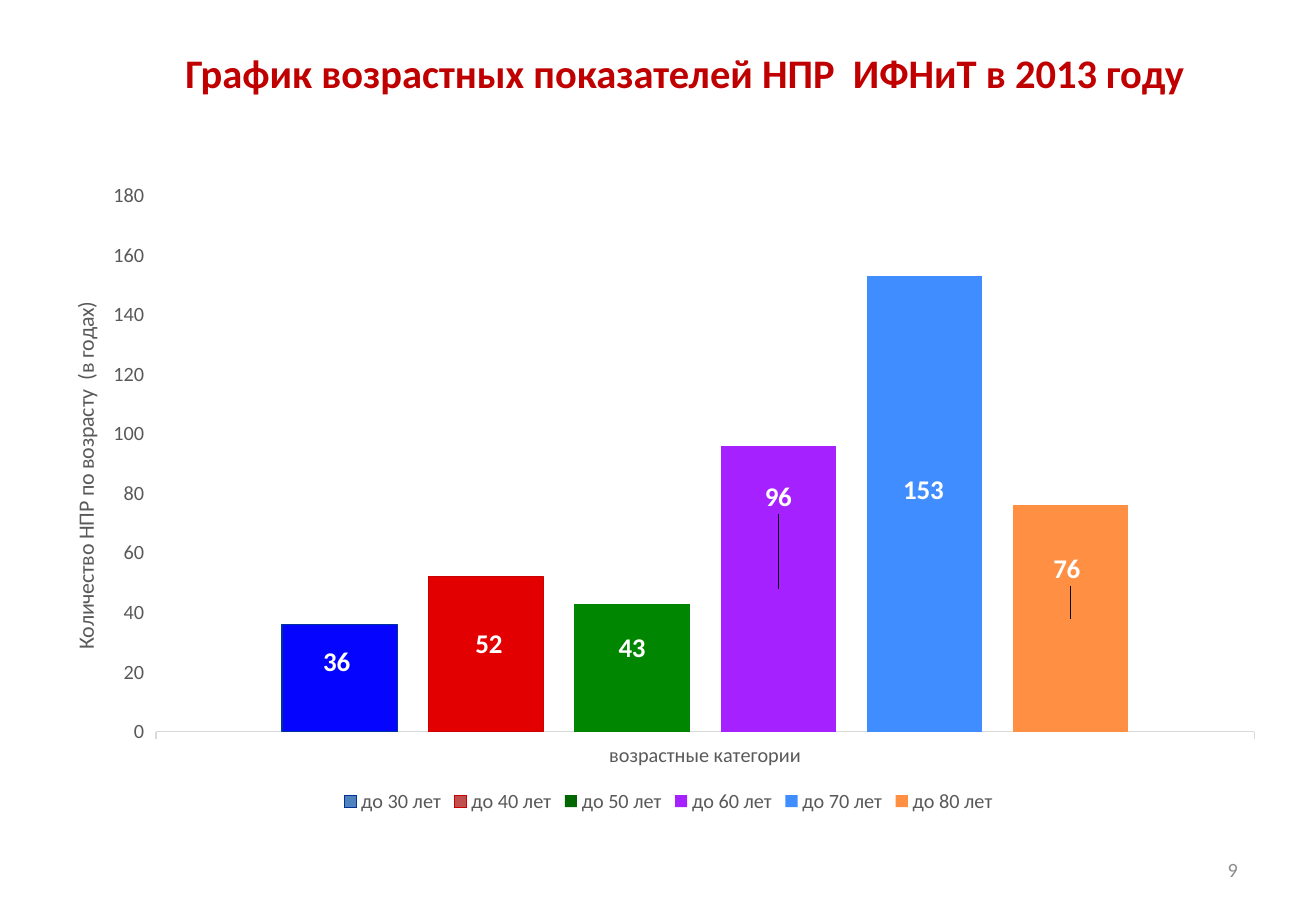
from lxml import etree
from pptx import Presentation
from pptx.chart.data import CategoryChartData
from pptx.dml.color import RGBColor
from pptx.enum.chart import XL_CHART_TYPE, XL_LABEL_POSITION, XL_LEGEND_POSITION, XL_TICK_MARK
from pptx.enum.text import MSO_ANCHOR, PP_ALIGN
from pptx.oxml.ns import qn
from pptx.util import Pt

PX = 7526
FONT = "Calibri"
COLUMNS = XL_CHART_TYPE.COLUMN_CLUSTERED
BOTTOM = XL_LEGEND_POSITION.BOTTOM
CENTRED_LABEL = XL_LABEL_POSITION.CENTER
TICK_OUT = XL_TICK_MARK.OUTSIDE
MIDDLE = MSO_ANCHOR.MIDDLE
CENTER, RIGHT = PP_ALIGN.CENTER, PP_ALIGN.RIGHT

COLORS = {
    "title": "C00000", "text": "595959", "number": "8C8C8C", "axis": "D9D9D9", "label": "FFFFFF",
    "blue_key": "4F81BD", "blue": "0505FF", "blue_line": "003399",
    "red_key": "C0504D", "red": "E20000", "red_line": "CC0000",
    "green_key": "006600", "green": "008600",
    "violet": "A521FF", "sky": "3F8DFF", "orange": "FF8F43",
}

AGE_GROUPS = [
    ("до 30 лет", 36, "blue_key", "blue", "blue_line", (-3, -15)),
    ("до 40 лет", 52, "red_key", "red", "red_line", (3, -10)),
    ("до 50 лет", 43, "green_key", "green", None, (0, -19)),
    ("до 60 лет", 96, "violet", "violet", None, (0, -91)),
    ("до 70 лет", 153, "sky", "sky", None, (-1, -13)),
    ("до 80 лет", 76, "orange", "orange", None, (-4, -49)),
]


def rgb(name):
    """Return the named colour."""
    return RGBColor.from_string(COLORS[name])


def style_font(font, size, color, bold=False):
    """Set the font, size, colour and weight."""
    font.name, font.size, font.bold = FONT, Pt(size), bold
    font.color.rgb = rgb(color)


def add_text(page, box, text, size, color, align, bold=False):
    """Add one line of text, centred vertically in its box."""
    frame = page.shapes.add_textbox(*(n * PX for n in box)).text_frame
    frame.word_wrap = True
    frame.vertical_anchor = MIDDLE
    frame.text = text
    para = frame.paragraphs[0]
    para.alignment = align
    style_font(para.runs[0].font, size, color, bold)


def make_layout(**settings):
    """Build a manual chart layout from its settings."""
    layout = etree.Element(qn("c:layout"))
    manual = etree.SubElement(layout, qn("c:manualLayout"))
    for tag, value in settings.items():
        etree.SubElement(manual, qn("c:" + tag)).set("val", str(value))
    return layout


def paint_outline(line, color):
    """Give a part its outline, or none."""
    if color:
        line.color.rgb = rgb(color)
        line.width = Pt(0.75)
    else:
        line.fill.background()


def style_series(series, group, box):
    """Colour one age group's bar and place its label."""
    key, bar, outline, (shift_x, shift_y) = group[2:]
    point = series.points[0]
    for part, color in ((series, key), (point, bar)):
        part.format.fill.solid()
        part.format.fill.fore_color.rgb = rgb(color)
        paint_outline(part.format.line, outline)
    label = point.data_label
    style_font(label.font, 16, "label", True)
    label.position = CENTRED_LABEL
    layout = make_layout(x=round(shift_x / box[2], 4), y=round(shift_y / box[3], 4))
    series._element.find(".//" + qn("c:dLbl")).insert(1, layout)


def style_axes(chart):
    """Format the category and value axes."""
    for axis in (chart.category_axis, chart.value_axis):
        axis.has_major_gridlines = False
        axis.major_tick_mark = TICK_OUT
        style_font(axis.tick_labels.font, 12, "text")
    paint_outline(chart.category_axis.format.line, "axis")
    values = chart.value_axis
    paint_outline(values.format.line, None)
    values.minimum_scale, values.maximum_scale, values.major_unit = 0, 180, 20
    frame = values.axis_title.text_frame
    frame.text = "Количество НПР по возрасту  (в годах)"
    style_font(frame.paragraphs[0].runs[0].font, 13, "text")


def add_age_chart(page, box):
    """Add the column chart of staff by age group."""
    data = CategoryChartData()
    data.categories = ["возрастные категории"]
    for name, value, *_ in AGE_GROUPS:
        data.add_series(name, [value])
    chart = page.shapes.add_chart(COLUMNS, *(n * PX for n in box), data).chart
    chart.has_title = False
    style_font(chart.font, 10, "text")
    chart.has_legend = True
    chart.legend.position = BOTTOM
    chart.legend.include_in_layout = False
    style_font(chart.legend.font, 12, "text")
    style_axes(chart)
    plot = chart.plots[0]
    plot.vary_by_categories = False
    plot.gap_width, plot.overlap = 219, -27
    for series, group in zip(plot.series, AGE_GROUPS):
        style_series(series, group, box)
    area = chart._chartSpace.find(".//" + qn("c:plotArea"))
    for old in area.findall(qn("c:layout")):
        area.remove(old)
    area.insert(0, make_layout(layoutTarget="inner", xMode="edge", yMode="edge",
                               x=0.074, y=0.07, w=0.913, h=0.801))


def main():
    """Build the slide and save the deck."""
    deck = Presentation()
    deck.slide_width, deck.slide_height = 1316 * PX, 911 * PX
    page = deck.slides.add_slide(deck.slide_layouts[6])
    add_text(page, (109, 35, 1152, 74), "График возрастных показателей НПР  ИФНиТ в 2013 году",
             24, "title", CENTER, True)
    add_age_chart(page, (67, 149, 1203, 669))
    add_text(page, (943, 845, 307, 49), "9", 12, "number", RIGHT)
    deck.save("out.pptx")


if __name__ == "__main__":
    main()
